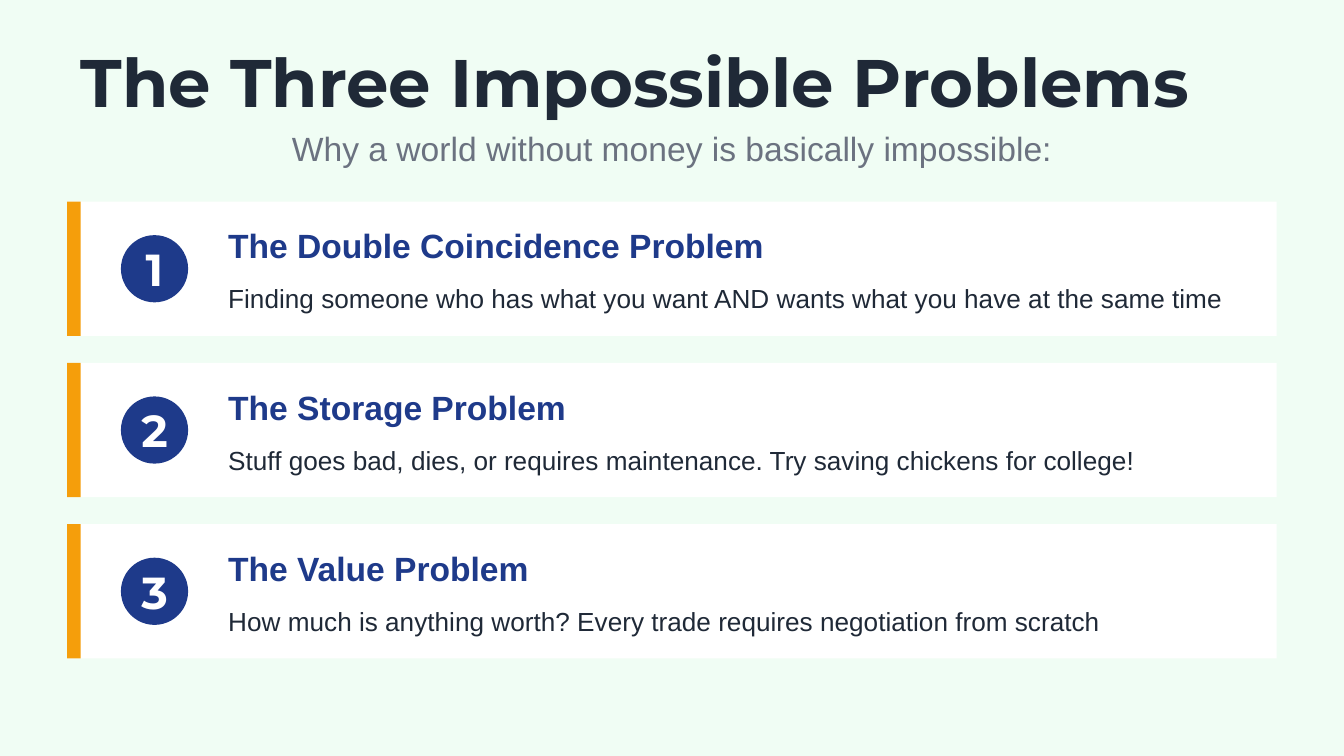
from pptx import Presentation
from pptx.dml.color import RGBColor
from pptx.enum.shapes import MSO_SHAPE
from pptx.enum.text import MSO_ANCHOR, MSO_AUTO_SIZE, PP_ALIGN
from pptx.util import Inches, Pt

RECTANGLE, OVAL = MSO_SHAPE.RECTANGLE, MSO_SHAPE.OVAL
MIDDLE = MSO_ANCHOR.MIDDLE
LEFT, CENTER = PP_ALIGN.LEFT, PP_ALIGN.CENTER
NO_AUTOFIT = MSO_AUTO_SIZE.NONE
TITLE_ONLY = 5

HEADING_FONT, BODY_FONT = "Montserrat", "Arial"
COLORS = {
    "background": "F0FDF4",
    "ink": "1F2937",
    "muted": "6B7280",
    "card": "FFFFFF",
    "accent": "F59E0B",
    "navy": "1E3A8A",
}

MARGIN, CONTENT_WIDTH = 0.5, 9
CARD_TOP, CARD_HEIGHT, CARD_GAP = 1.5, 1, 0.2
PROBLEMS = [
    ("The Double Coincidence Problem",
     "Finding someone who has what you want AND wants what you have at the same time"),
    ("The Storage Problem",
     "Stuff goes bad, dies, or requires maintenance. Try saving chickens for college!"),
    ("The Value Problem",
     "How much is anything worth? Every trade requires negotiation from scratch"),
]


def color(name):
    """Return the named palette colour."""
    return RGBColor.from_string(COLORS[name])


def write(frame, text, size, font_name, color_name, bold=False, align=LEFT):
    """Write one formatted line, vertically centred in its frame."""
    frame.word_wrap = True
    frame.auto_size = NO_AUTOFIT
    frame.vertical_anchor = MIDDLE
    paragraph = frame.paragraphs[0]
    paragraph.alignment = align
    run = paragraph.add_run()
    run.text = text
    run.font.size = Pt(size)
    run.font.name = font_name
    run.font.bold = bold
    run.font.color.rgb = color(color_name)


def add_label(slide, left, top, width, height, *style, **options):
    """Add a text box holding one formatted line."""
    label = slide.shapes.add_textbox(
        Inches(left), Inches(top), Inches(width), Inches(height))
    write(label.text_frame, *style, **options)


def add_block(slide, kind, left, top, width, height, fill):
    """Add a flat filled shape without outline or shadow."""
    block = slide.shapes.add_shape(
        kind, Inches(left), Inches(top), Inches(width), Inches(height))
    block.shadow.inherit = False
    block.fill.solid()
    block.fill.fore_color.rgb = color(fill)
    block.line.fill.background()


def add_header(slide, left, top, width):
    """Place the slide title and the subtitle below it."""
    title = slide.shapes.title
    title.left, title.top = Inches(left), Inches(top)
    title.width, title.height = Inches(width), Inches(0.6)
    write(title.text_frame, "The Three Impossible Problems",
          36, HEADING_FONT, "ink", bold=True)
    add_label(slide, left, top + 0.65, width, 0.3,
              "Why a world without money is basically impossible:",
              18, BODY_FONT, "muted", align=CENTER)


def add_problem_card(slide, left, top, width, height, number, heading, detail):
    """Draw one numbered problem card with its accent bar."""
    add_block(slide, RECTANGLE, left, top, width, height, "card")
    add_block(slide, RECTANGLE, left, top, 0.1, height, "accent")
    badge_size = 0.5
    badge_box = (left + 0.4, top + (height - badge_size) / 2, badge_size, badge_size)
    add_block(slide, OVAL, *badge_box, "navy")
    add_label(slide, *badge_box, str(number), 24, HEADING_FONT, "card",
              bold=True, align=CENTER)
    text_left, text_width = left + 1.1, width - 1.3
    add_label(slide, text_left, top + 0.15, text_width, 0.35,
              heading, 18, BODY_FONT, "navy", bold=True)
    add_label(slide, text_left, top + 0.52, text_width, 0.4,
              detail, 14, BODY_FONT, "ink")


def build_problems_slide(presentation):
    """Build the slide with its header and stacked problem cards."""
    slide = presentation.slides.add_slide(presentation.slide_layouts[TITLE_ONLY])
    slide.background.fill.solid()
    slide.background.fill.fore_color.rgb = color("background")
    add_header(slide, MARGIN, 0.3, CONTENT_WIDTH)
    for index, (heading, detail) in enumerate(PROBLEMS):
        top = CARD_TOP + index * (CARD_HEIGHT + CARD_GAP)
        add_problem_card(slide, MARGIN, top, CONTENT_WIDTH, CARD_HEIGHT,
                         index + 1, heading, detail)


def main():
    """Create and save a 16:9 presentation."""
    presentation = Presentation()
    presentation.slide_width = Inches(10)
    presentation.slide_height = Inches(10 * 9 / 16)
    build_problems_slide(presentation)
    presentation.save("out.pptx")


if __name__ == "__main__":
    main()
